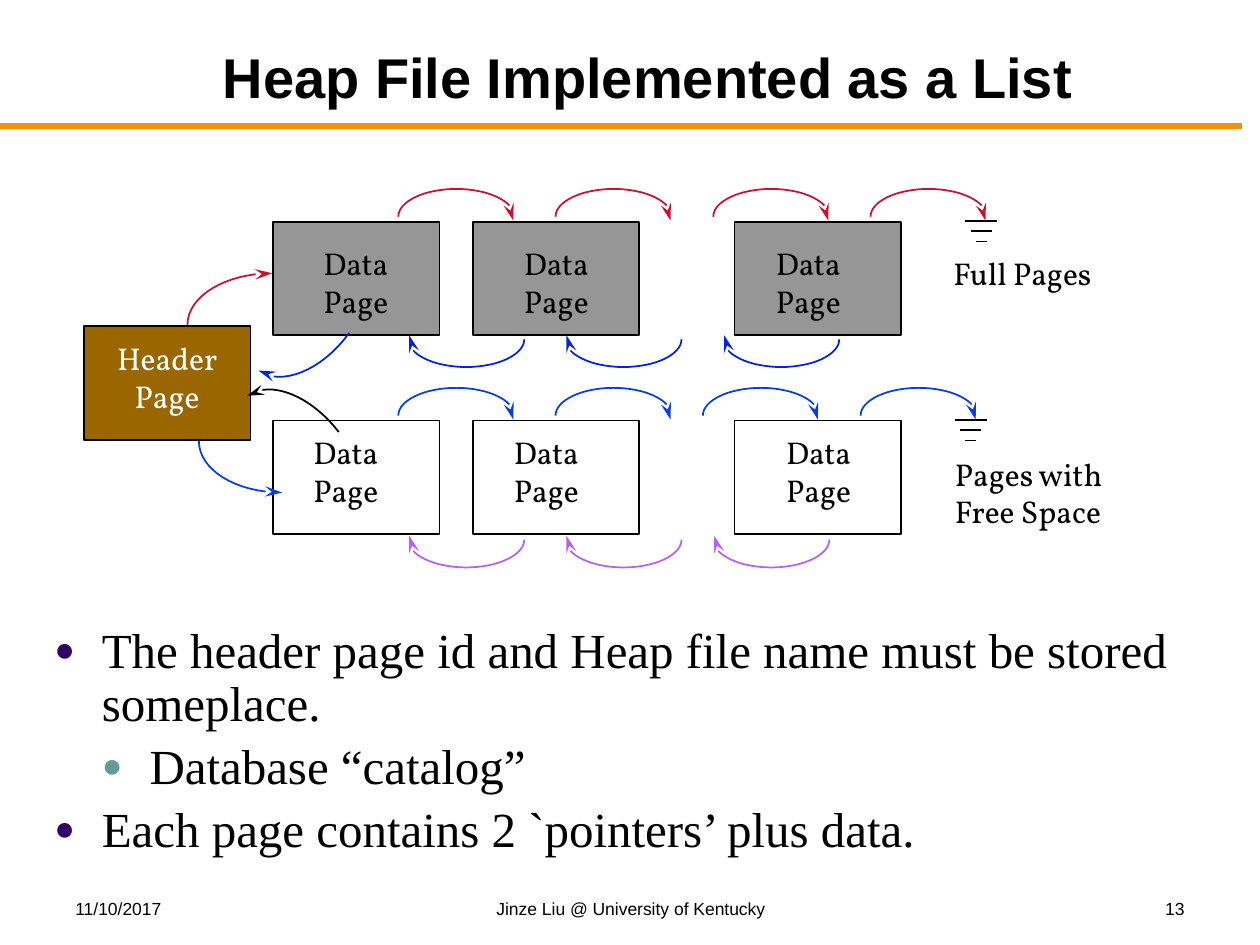
from dataclasses import dataclass

from lxml import etree
from pptx import Presentation
from pptx.dml.color import RGBColor
from pptx.enum.shapes import MSO_CONNECTOR, MSO_SHAPE
from pptx.enum.text import MSO_ANCHOR, MSO_AUTO_SIZE, PP_ALIGN
from pptx.oxml.ns import qn
from pptx.util import Cm, Pt

RECT, STRAIGHT = MSO_SHAPE.RECTANGLE, MSO_CONNECTOR.STRAIGHT
LEFT, CENTER, RIGHT = PP_ALIGN.LEFT, PP_ALIGN.CENTER, PP_ALIGN.RIGHT
TOP, MIDDLE = MSO_ANCHOR.TOP, MSO_ANCHOR.MIDDLE
NO_FIT, GROW = MSO_AUTO_SIZE.NONE, MSO_AUTO_SIZE.SHAPE_TO_FIT_TEXT

BLACK = RGBColor(0x00, 0x00, 0x00)
WHITE = RGBColor(0xFF, 0xFF, 0xFF)
GRAY = RGBColor(0x96, 0x96, 0x96)
BROWN = RGBColor(0x99, 0x66, 0x00)
ORANGE = RGBColor(0xEF, 0x91, 0x00)
RED = RGBColor(0xCF, 0x0E, 0x30)
DARK_BLUE = RGBColor(0x00, 0x21, 0xE8)
BLUE = RGBColor(0x06, 0x3D, 0xE8)
VIOLET = RGBColor(0xB7, 0x60, 0xF9)
INDIGO = RGBColor(0x33, 0x00, 0x66)
TEAL = RGBColor(0x66, 0x99, 0x99)

Point = tuple[float, float]

# All lengths below are centimetres
PAGE_W, PAGE_H = 3.35, 2.29
PAGE_XS = (5.51, 9.53, 14.81)
ARC_W, ARC_H, ARC_RISE = 2.34, 0.64, 0.56
KAPPA = 0.55
CURVE_STEPS = 16


@dataclass
class PageRow:
    y: float
    fill: RGBColor | None
    label_xs: tuple[float, ...]
    label_y: float
    next_xs: tuple[float, ...]
    next_y: float
    next_color: RGBColor
    prev_xs: tuple[float, ...]
    prev_y: float
    prev_color: RGBColor
    ground: Point


@dataclass
class HeaderLink:
    points: list[Point]
    color: RGBColor


@dataclass
class Label:
    lines: list[str]
    x: float
    y: float
    w: float
    h: float
    size: float = 18
    font: str = "Vollkorn"
    color: RGBColor = BLACK
    align: PP_ALIGN = LEFT
    wrap: bool = False


@dataclass
class Bullet:
    text: str
    level: int
    color: RGBColor


ROWS = [
    PageRow(4.47, GRAY, (6.27, 10.31, 15.39), 4.8,
            (8.03, 11.2, 14.38, 17.55), 3.81, RED,
            (8.23, 11.4, 14.58), 6.76, DARK_BLUE, (19.46, 4.45)),
    PageRow(8.48, None, (6.07, 10.11, 15.6), 8.61,
            (8.03, 11.2, 14.17, 17.35), 7.82, BLUE,
            (8.23, 11.4, 14.38), 10.8, VIOLET, (19.25, 8.46)),
]
HEADER_LINKS = [
    HeaderLink([(3.78, 6.55), (3.78, 5.97), (4.55, 5.51), (5.49, 5.51)], RED),
    HeaderLink([(7.04, 6.71), (6.5, 7.47), (5.66, 7.8), (5.21, 7.47)], DARK_BLUE),
    HeaderLink([(6.83, 8.71), (6.27, 7.98), (5.46, 7.65), (4.98, 7.98)], BLACK),
    HeaderLink([(4.01, 8.89), (4.01, 9.47), (4.75, 9.93), (5.69, 9.93)], BLUE),
]
LABELS = [
    Label(["Header", "Page"], 2.06, 6.71, 2.62, 1.78, color=WHITE, align=CENTER),
    Label(["Full Pages"], 18.97, 5.0, 3.4, 1.02),
    Label(["Pages with", "Free Space"], 19.0, 9.04, 3.58, 1.78),
    Label(["11/10/2017"], 1.27, 17.98, 5.92, 0.64, 10, "Arial", wrap=True),
    Label(["Jinze Liu @ University of Kentucky"], 8.69, 17.98, 8.05, 0.64,
          10, "Arial", align=CENTER, wrap=True),
    Label(["13"], 18.21, 17.98, 5.92, 0.64, 10, "Arial", align=RIGHT, wrap=True),
]
BULLETS = [
    Bullet("The header page id and Heap file name must be stored someplace.", 0, INDIGO),
    Bullet("Database “catalog”", 1, TEAL),
    Bullet("Each page contains 2 `pointers’ plus data.", 0, INDIGO),
]


def add_run(p, text: str, font: str, size: float, color: RGBColor, bold: bool = False) -> None:
    r = p.add_run()
    r.text = text
    r.font.name, r.font.size, r.font.bold = font, Pt(size), bold
    r.font.color.rgb = color


def add_label(s, label: Label) -> None:
    tf = s.shapes.add_textbox(Cm(label.x), Cm(label.y), Cm(label.w), Cm(label.h)).text_frame
    tf.word_wrap = label.wrap
    tf.auto_size = NO_FIT if label.wrap else GROW
    for i, line in enumerate(label.lines):
        p = tf.add_paragraph() if i else tf.paragraphs[0]
        p.alignment = label.align
        add_run(p, line, label.font, label.size, label.color)


def add_page(s, x: float, y: float, fill: RGBColor | None) -> None:
    sp = s.shapes.add_shape(RECT, Cm(x), Cm(y), Cm(PAGE_W), Cm(PAGE_H))
    sp.shadow.inherit = False
    if fill is None:
        sp.fill.background()
    else:
        sp.fill.solid()
        sp.fill.fore_color.rgb = fill
    sp.line.color.rgb, sp.line.width = BLACK, Pt(1)


def add_line(s, x1: float, x2: float, y: float, color: RGBColor, width: float) -> None:
    line = s.shapes.add_connector(STRAIGHT, Cm(x1), Cm(y), Cm(x2), Cm(y))
    line.line.color.rgb, line.line.width = color, Pt(width)
    etree.SubElement(line._element.spPr, qn("a:effectLst"))


def bezier(p0: Point, p1: Point, p2: Point, p3: Point) -> list[Point]:
    def at(t: float, i: int) -> float:
        u = 1 - t
        return u**3 * p0[i] + 3 * u * u * t * p1[i] + 3 * u * t * t * p2[i] + t**3 * p3[i]
    return [(at(k / CURVE_STEPS, 0), at(k / CURVE_STEPS, 1)) for k in range(CURVE_STEPS + 1)]


def add_arrow(s, points: list[Point], color: RGBColor) -> None:
    start, *rest = [(Cm(x), Cm(y)) for x, y in points]
    builder = s.shapes.build_freeform(*start)
    builder.add_line_segments(rest, close=False)
    sp = builder.convert_to_shape()
    sp.shadow.inherit = False
    sp.fill.background()
    sp.line.color.rgb, sp.line.width = color, Pt(1)
    etree.SubElement(sp.line._get_or_add_ln(), qn("a:tailEnd"), type="stealth", w="med", len="lg")


def add_pointer(s, x: float, y: float, color: RGBColor, forward: bool) -> None:
    """Half ellipse over the pages, or turned by 180 degrees below them."""
    half, cx, cy = ARC_W / 2, KAPPA * ARC_W / 2, KAPPA * ARC_RISE
    rise = bezier((0, ARC_RISE), (0, ARC_RISE - cy), (half - cx, 0), (half, 0))
    fall = [(ARC_W - px, py) for px, py in reversed(rise[:-1])]
    points = rise + fall + [(ARC_W - 0.02, ARC_H)]
    if not forward:
        points = [(ARC_W - px, ARC_H - py) for px, py in points]
    add_arrow(s, [(x + px, y + py) for px, py in points], color)


def add_ground(s, x: float, y: float) -> None:
    for i in range(3):
        inset = 0.105 * i
        add_line(s, x + inset, x + 0.64 - inset, y + 0.21 * i, BLACK, 1)


def place(sp, x: float, y: float, w: float, h: float, anchor: MSO_ANCHOR):
    sp.left, sp.top, sp.width, sp.height = Cm(x), Cm(y), Cm(w), Cm(h)
    tf = sp.text_frame
    tf.auto_size, tf.vertical_anchor, tf.word_wrap = NO_FIT, anchor, True
    return tf


def add_bullet(p, bullet: Bullet) -> None:
    p.level, p.line_spacing, p.space_before = bullet.level, 0.9, Pt(5.6)
    pPr = p._p.get_or_add_pPr()
    pPr.set("marL", str(Cm(0.96 * (bullet.level + 1))))
    pPr.set("indent", str(-Cm(0.96)))
    clr = etree.SubElement(pPr, qn("a:buClr"))
    etree.SubElement(clr, qn("a:srgbClr"), val=str(bullet.color))
    etree.SubElement(pPr, qn("a:buSzPct"), val="70000")
    etree.SubElement(pPr, qn("a:buChar"), char="●")
    add_run(p, bullet.text, "Times New Roman", 28, BLACK)


def main() -> None:
    prs = Presentation()
    prs.slide_width, prs.slide_height = Cm(25.4), Cm(19.05)
    s = prs.slides.add_slide(prs.slide_layouts[1])

    # Title, rule and bullets
    add_line(s, 0, 25.04, 2.54, ORANGE, 3)
    p = place(s.shapes.title, 2.74, 0.64, 20.96, 1.78, MIDDLE).paragraphs[0]
    p.alignment = CENTER
    add_run(p, "Heap File Implemented as a List ", "Arial", 32, BLACK, bold=True)
    tf = place(s.placeholders[1], 0.84, 12.5, 23.67, 4.06, TOP)
    for i, bullet in enumerate(BULLETS):
        add_bullet(tf.add_paragraph() if i else tf.paragraphs[0], bullet)

    # Header page and the two page lists
    add_page(s, 1.7, 6.58, BROWN)
    for row in ROWS:
        for x, label_x in zip(PAGE_XS, row.label_xs):
            add_page(s, x, row.y, row.fill)
            add_label(s, Label(["Data", "Page"], label_x, row.label_y, 1.88, 1.78))
        for x in row.next_xs:
            add_pointer(s, x, row.next_y, row.next_color, forward=True)
        for x in row.prev_xs:
            add_pointer(s, x, row.prev_y, row.prev_color, forward=False)
        add_ground(s, *row.ground)

    # Links to the header page, then captions and footer
    for link in HEADER_LINKS:
        add_arrow(s, bezier(*link.points), link.color)
    for label in LABELS:
        add_label(s, label)
    prs.save("out.pptx")


if __name__ == "__main__":
    main()
